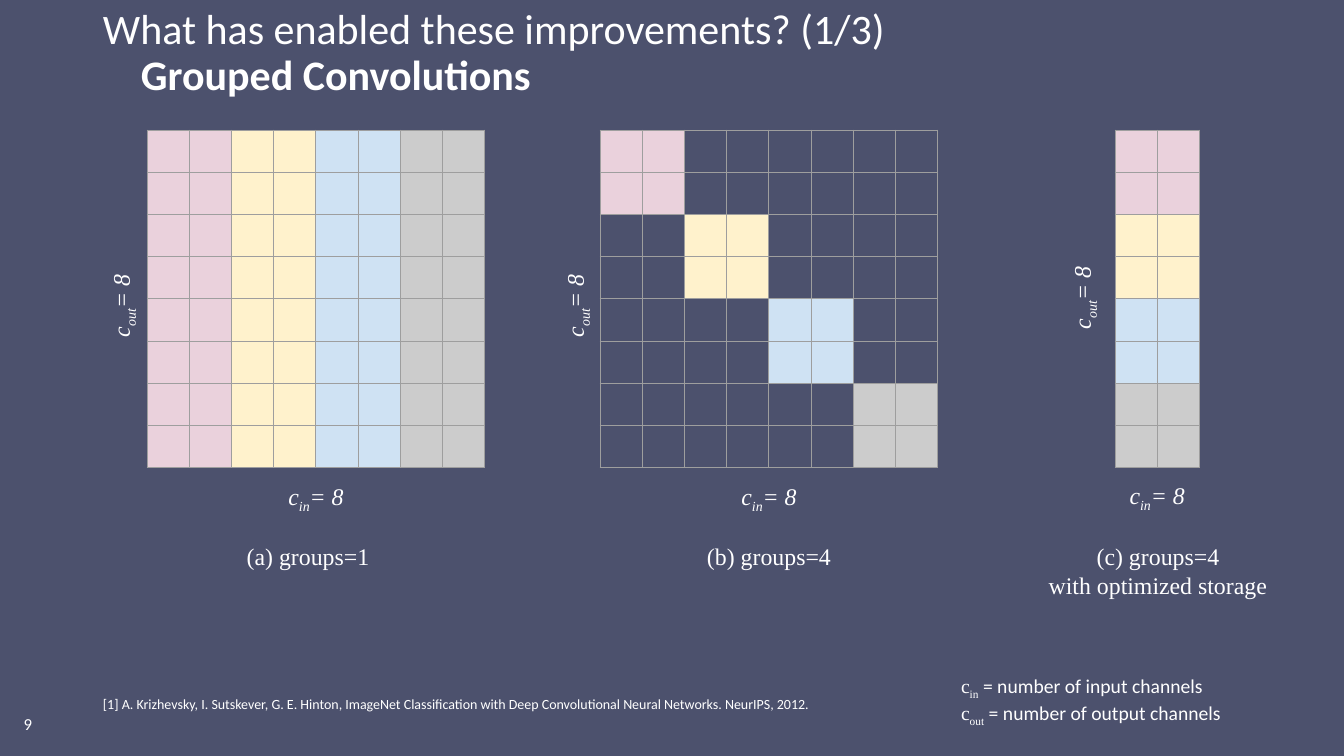
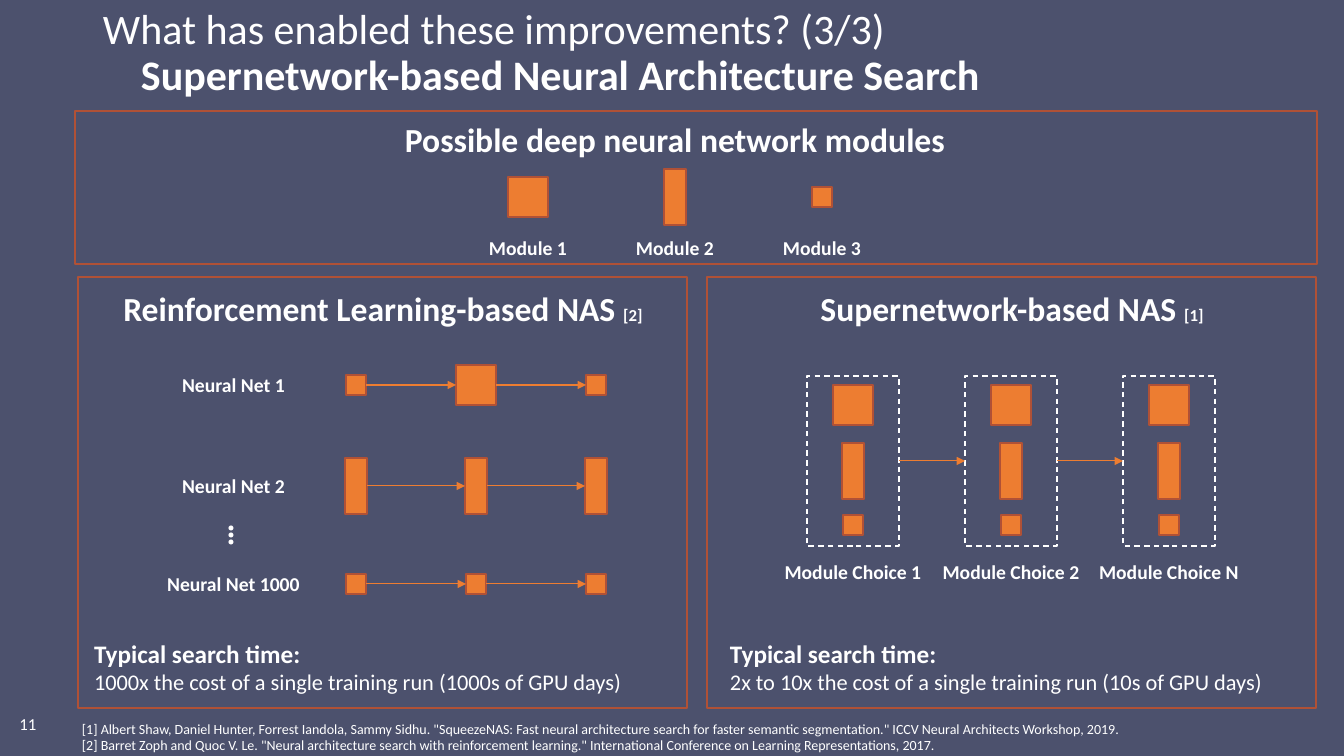
"""Build two slides on grouped convolutions and neural architecture search."""
import pptx
import pptx.dml.color
import pptx.enum.dml
import pptx.enum.shapes
import pptx.enum.text
import pptx.oxml
import pptx.oxml.ns
import pptx.util

PX = 9525 * 96 / 100.8
ALIGN = pptx.enum.text.PP_ALIGN
ANCHOR = pptx.enum.text.MSO_ANCHOR
SHAPE = pptx.enum.shapes.MSO_SHAPE

COLORS = {
    "background": "4C516D", "text": "FFFFFF", "module": "ED7D31", "outline": "B05136",
    "grid": "9E9E9E", "pink": "EAD1DC", "yellow": "FFF2CC", "blue": "CFE2F3", "gray": "CCCCCC",
}
GROUPS = ["pink", "yellow", "blue", "gray"]

PLAIN = {"name": "Calibri", "size": 14, "bold": False, "italic": False}
TITLE = {**PLAIN, "size": 30}
HEADING = {**PLAIN, "size": 24, "bold": True}
LABEL = {**PLAIN, "bold": True}
RESULT = {**PLAIN, "size": 16}
REFERENCE = {**PLAIN, "size": 10}
NUMBER = {**PLAIN, "size": 12}
CAPTION = {**PLAIN, "name": "Times New Roman", "size": 17}
FORMULA = {**CAPTION, "italic": True}
SYMBOL = {"name": "Times New Roman"}
SUB = {"baseline": -25000}

CONVOLUTION = {
    "title": ["What has enabled these improvements? (1/3)", "Grouped Convolutions"],
    "number": "9",
    "references": ["[1] A. Krizhevsky, I. Sutskever, G. E. Hinton, ImageNet Classification with "
                   "Deep Convolutional Neural Networks. NeurIPS, 2012."],
    "references_at": (93, 690, 1206, 41),
    "references_inset": 5,
}
SEARCH = {
    "title": ["What has enabled these improvements? (3/3)",
              "Supernetwork-based Neural Architecture Search"],
    "number": "11",
    "references": [
        '[1] Albert Shaw, Daniel Hunter, Forrest Iandola, Sammy Sidhu. "SqueezeNAS: Fast neural '
        'architecture search for faster semantic segmentation." ICCV Neural Architects Workshop, 2019.',
        '[2] Barret Zoph and Quoc V. Le. "Neural architecture search with reinforcement learning." '
        "International Conference on Learning Representations, 2017."],
    "references_at": (72, 710, 1206, 57),
    "references_inset": 10,
}

GRID_TOP, GRID_SIZE, GRID_COUNT = 130, 338, 8
FIGURES = [
    {"left": 147, "columns": 8, "kind": "dense", "out": (113, 306), "in_top": 472,
     "caption": ["(a) groups=1"], "caption_x": 308},
    {"left": 600, "columns": 8, "kind": "diagonal", "out": (567, 306), "in_top": 472,
     "caption": ["(b) groups=4"], "caption_x": 769},
    {"left": 1115, "columns": 2, "kind": "packed", "out": (1074, 298), "in_top": 471,
     "caption": ["(c) groups=4", "with optimized storage"], "caption_x": 1158},
]
NOTATION = [
    [("c", SYMBOL), ("in", {**SYMBOL, **SUB}), (" = number of input channels", {})],
    [("c", SYMBOL), ("out", {**SYMBOL, **SUB}), (" = number of output channels", {})],
]

MODULES = {"large": (40, 40), "tall": (22, 56), "small": (20, 20)}
PANELS = [(75, 111, 1242, 153), (78, 277, 609, 431), (707, 277, 609, 431)]
NETS = [
    ("Neural Net 1", 385, ["small", "large", "small"]),
    ("Neural Net 2", 486, ["tall", "tall", "tall"]),
    ("Neural Net 1000", 584, ["small", "small", "small"]),
]
CHOICES = ["Module Choice 1", "Module Choice 2", "Module Choice N"]
CHOICE_ROWS = {"large": 405, "tall": 471, "small": 525}
METHODS = [
    ("Reinforcement Learning-based NAS ", "[2]", (110, 283, 546, 50),
     "1000x the cost of a single training run (1000s of GPU days)", (84, 633, 598, 102)),
    ("Supernetwork-based NAS ", "[1]", (739, 283, 546, 50),
     "2x to 10x the cost of a single training run (10s of GPU days)", (720, 633, 591, 88)),
]


def px(value):
    return pptx.util.Emu(round(value * PX))


def place(at):
    return [px(value) for value in at]


def centered(x, y, width, height):
    return x - width / 2, y - height / 2, width, height


def rgb(name):
    return pptx.dml.color.RGBColor.from_string(COLORS[name])


def assign(target, values):
    for name, value in values.items():
        setattr(target, name, value)


def write(frame, paragraphs, look, align=ALIGN.LEFT, inset=5, side=10, anchor=ANCHOR.TOP, spacing=1.0):
    """Fill a frame with paragraphs, each a string or a list of (text, format) spans."""
    assign(frame, {"word_wrap": True, "auto_size": pptx.enum.text.MSO_AUTO_SIZE.NONE,
                   "vertical_anchor": anchor, "margin_left": px(side), "margin_right": px(side),
                   "margin_top": px(inset), "margin_bottom": px(inset)})
    for index, spans in enumerate(paragraphs):
        para = frame.add_paragraph() if index else frame.paragraphs[0]
        assign(para, {"alignment": align, "line_spacing": spacing, "space_before": pptx.util.Pt(0)})
        for text, extra in [(spans, {})] if isinstance(spans, str) else spans:
            span = para.add_run()
            span.text = text
            values = {**look, **extra}
            baseline = values.pop("baseline", None)
            assign(span.font, {**values, "size": pptx.util.Pt(values["size"])})
            span.font.color.rgb = rgb("text")
            if baseline:
                span.font._element.set("baseline", str(baseline))


def add_text(shapes, at, paragraphs, look, **layout):
    box = shapes.add_textbox(*place(at))
    write(box.text_frame, paragraphs, look, **layout)
    return box


def add_box(shapes, at, fill=None, line="outline", dash=False, kind=SHAPE.RECTANGLE):
    box = shapes.add_shape(kind, *place(at))
    box.shadow.inherit = False
    if fill:
        box.fill.solid()
        box.fill.fore_color.rgb = rgb(fill)
    else:
        box.fill.background()
    if line:
        box.line.color.rgb = rgb(line)
        box.line.width = pptx.util.Pt(1)
    else:
        box.line.fill.background()
    if dash:
        box.line.dash_style = pptx.enum.dml.MSO_LINE.DASH
    return box


def add_module(shapes, kind, x, y):
    return add_box(shapes, centered(x, y, *MODULES[kind]), fill="module")


def chain(shapes, boxes):
    """Join neighbouring boxes from left to right with arrows."""
    for start, end in zip(boxes, boxes[1:]):
        arrow = shapes.add_connector(pptx.enum.shapes.MSO_CONNECTOR.STRAIGHT, 0, 0, 0, 0)
        arrow.begin_connect(start, 3)
        arrow.end_connect(end, 1)
        arrow.line.color.rgb = rgb("module")
        arrow.line.width = pptx.util.Pt(0.75)
        head = pptx.oxml.parse_xml(f'<a:tailEnd {pptx.oxml.ns.nsdecls("a")} type="triangle"/>')
        arrow.line._get_or_add_ln().append(head)
        effects = pptx.oxml.parse_xml(f'<a:effectLst {pptx.oxml.ns.nsdecls("a")}/>')
        arrow._element.spPr.append(effects)


def set_margin(para, margin):
    properties = para._p.get_or_add_pPr()
    properties.set("marL", str(px(margin)))
    properties.set("indent", "0")
    return properties


def add_slide(deck, content):
    slide = deck.slides.add_slide(deck.slide_layouts[1])
    title, body = slide.shapes.title, slide.placeholders[1]
    frames = [(title, (93, 11, 1206, 86)), (body, content["references_at"])]
    for holder, at in frames:
        assign(holder, dict(zip(["left", "top", "width", "height"], place(at))))
    heading, topic = content["title"]
    write(title.text_frame, [heading, [(topic, {"bold": True})]], TITLE,
          anchor=ANCHOR.MIDDLE, spacing=0.9)
    set_margin(title.text_frame.paragraphs[1], 38)
    write(body.text_frame, content["references"], REFERENCE, inset=content["references_inset"])
    for para in body.text_frame.paragraphs:
        bullet = pptx.oxml.parse_xml(f'<a:buNone {pptx.oxml.ns.nsdecls("a")}/>')
        set_margin(para, 0).append(bullet)
    add_text(slide.shapes, (0, 711, 56, 25), [content["number"]], NUMBER,
             align=ALIGN.CENTER, inset=0, side=0, anchor=ANCHOR.MIDDLE)
    return slide


def cell_color(kind, row, column):
    if kind == "diagonal" and row // 2 != column // 2:
        return None
    return GROUPS[(row if kind == "packed" else column) // 2]


def style_cell(cell, color):
    if color:
        cell.fill.solid()
        cell.fill.fore_color.rgb = rgb(color)
    else:
        cell.fill.background()
    for index, side in enumerate(["lnL", "lnR", "lnT", "lnB"]):
        border = pptx.oxml.parse_xml(
            f'<a:{side} {pptx.oxml.ns.nsdecls("a")} w="9525"><a:solidFill>'
            f'<a:srgbClr val="{COLORS["grid"]}"/></a:solidFill></a:{side}>')
        cell._tc.get_or_add_tcPr().insert(index, border)


def add_weights(shapes, figure):
    columns, left = figure["columns"], figure["left"]
    width = GRID_SIZE * columns / GRID_COUNT
    table = shapes.add_table(GRID_COUNT, columns, *place((left, GRID_TOP, width, GRID_SIZE))).table
    assign(table, {"first_row": False, "horz_banding": False})
    for row in range(GRID_COUNT):
        for column in range(columns):
            style_cell(table.cell(row, column), cell_color(figure["kind"], row, column))
    layout = {"align": ALIGN.CENTER, "inset": 10}
    add_text(shapes, (left + width / 2 - 58, figure["in_top"], 116, 34),
             [[("c", {}), ("in", SUB), ("= 8", {})]], FORMULA, **layout)
    side_label = add_text(shapes, centered(*figure["out"], 116, 34),
                          [[("c", {}), ("out", SUB), ("= 8", {})]], FORMULA, **layout)
    side_label.rotation = 270
    lines = figure["caption"]
    add_text(shapes, (figure["caption_x"] - 138, 532, 276, 34 * len(lines)), lines, CAPTION, **layout)


def build_convolution(deck):
    shapes = add_slide(deck, CONVOLUTION).shapes
    for figure in FIGURES:
        add_weights(shapes, figure)
    add_text(shapes, (951, 664, 303, 74), NOTATION, PLAIN, inset=10)


def build_search(deck):
    slide = add_slide(deck, SEARCH)
    for panel in PANELS:
        add_box(slide.shapes, panel)
    legend, nets, choices = [slide.shapes.add_group_shape().shapes for panel in PANELS]

    add_text(legend, (231, 114, 888, 45), ["Possible deep neural network modules"],
             HEADING, align=ALIGN.CENTER)
    for index, kind in enumerate(MODULES):
        x = 528 + 147 * index
        add_module(legend, kind, x, 197)
        add_text(legend, (x - 49, 231, 98, 31), [f"Module {index + 1}"], LABEL, align=ALIGN.CENTER)

    for shapes, (name, mark, name_at, cost, cost_at) in zip([nets, choices], METHODS):
        add_text(shapes, name_at, [[(name, {}), (mark, {"size": 12})]], HEADING, align=ALIGN.CENTER)
        add_text(shapes, cost_at,
                 [[("Typical search time:", {"size": 18, "bold": True})], cost], RESULT)

    for label, y, kinds in NETS:
        add_text(nets, (157, y - 17, 153, 35), [label], LABEL, align=ALIGN.CENTER)
        chain(nets, [add_module(nets, kind, 356 + 120 * step, y) for step, kind in enumerate(kinds)])
    for index in range(3):
        add_box(nets, centered(231, 528 + 7 * index, 5, 5), fill="text", line=None,
                kind=SHAPE.FLOWCHART_CONNECTOR)

    frames = []
    for index, label in enumerate(CHOICES):
        x = 853 + 158 * index
        frames.append(add_box(choices, centered(x, 461, 92, 170), line="text", dash=True))
        for kind, y in CHOICE_ROWS.items():
            add_module(choices, kind, x, y)
        add_text(choices, (x - 80, 555, 160, 35), [label], LABEL, align=ALIGN.CENTER)
    chain(choices, frames)


def main():
    deck = pptx.Presentation()
    assign(deck, {"slide_width": px(1344), "slide_height": px(756)})
    backdrop = deck.slide_master.background.fill
    backdrop.solid()
    backdrop.fore_color.rgb = rgb("background")
    build_convolution(deck)
    build_search(deck)
    deck.save("out.pptx")


if __name__ == "__main__":
    main()
